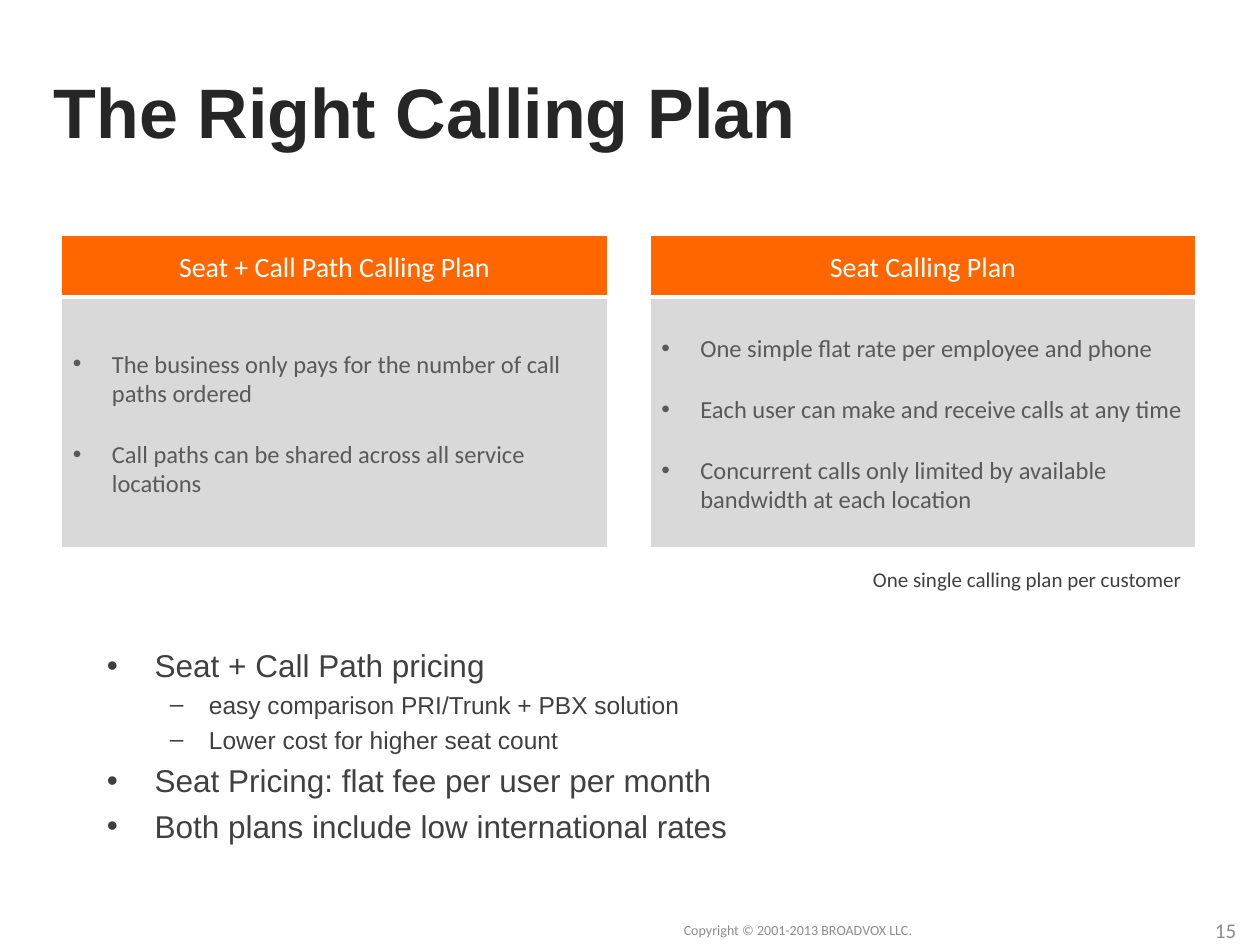
"""Build the calling plan comparison slide."""
from lxml.etree import SubElement
from pptx import Presentation
from pptx.dml.color import RGBColor as RGB
from pptx.enum.shapes import MSO_SHAPE as SHAPE
from pptx.enum.text import MSO_ANCHOR as ANCHOR, PP_ALIGN as ALIGN
from pptx.oxml.ns import qn
from pptx.util import Inches, Pt

TITLE = "The Right Calling Plan"
PLANS = [
    ("Seat + Call Path Calling Plan", [
        "The business only pays for the number of call paths ordered",
        "Call paths can be shared across all service locations"]),
    ("Seat Calling Plan", [
        "One simple flat rate per employee and phone",
        "Each user can make and receive calls at any time",
        "Concurrent calls only limited by available bandwidth at each location"]),
]
CAPTION = "One single calling plan per customer"
POINTS = [
    (0, "Seat + Call Path pricing"),
    (1, "easy comparison PRI/Trunk + PBX solution"),
    (1, "Lower cost for higher seat count"),
    (0, "Seat Pricing: flat fee per user per month"),
    (0, "Both plans include low international rates"),
]
COPYRIGHT = "Copyright © 2001-2013 BROADVOX LLC."
NUMBER = "15"

THEME = {
    "title": dict(name="Arial", size=40, color="262626", bold=True),
    "point": dict(name="Arial", size=18, color="404040"),
    "subpoint": dict(name="Arial", size=14, color="404040"),
    "header": dict(name="Calibri", size=16, color="FFFFFF"),
    "card": dict(name="Calibri", size=14, color="595959"),
    "caption": dict(name="Calibri", size=12, color="404040"),
    "number": dict(name="Calibri", size=12, color="8C8C8C"),
    "copyright": dict(name="Calibri", size=8, color="8C8C8C"),
    "header_fill": "FF6600", "card_fill": "D9D9D9", "border": "FFFFFF",
}
LEVELS = [("point", "•", 0.38, 0.38, 4.2), ("subpoint", "–", 0.81, 0.31, 3.2)]
WIDTH, HEIGHT = 10, 7.5
GRID = dict(left=0.48, top=1.86, col=4.35, gap=0.32, header=0.5, card=2)


def write(p, text, style):
    r = p.add_run()
    r.text = text
    for key, value in THEME[style].items():
        if key == "color":
            r.font.color.rgb = RGB.from_string(value)
        else:
            setattr(r.font, key, Pt(value) if key == "size" else value)


def bullet(p, char, margin, hang):
    pPr = p._p.get_or_add_pPr()
    pPr.set("marL", str(Inches(margin)))
    pPr.set("indent", str(-Inches(hang)))
    SubElement(pPr, qn("a:buFont"), typeface="Arial")
    SubElement(pPr, qn("a:buChar"), char=char)


def add_list(tf, items):
    for i, (level, text, style, char, margin, hang, before) in enumerate(items):
        p = tf.add_paragraph() if i else tf.paragraphs[0]
        bullet(p, char, margin, hang)
        p.level, p.alignment = level, ALIGN.LEFT
        if i:
            p.space_before = Pt(before)
        write(p, text, style)


def add_text(s, box, text=None, style=None, align=ALIGN.LEFT, anchor=ANCHOR.MIDDLE, wrap=True):
    tf = s.shapes.add_textbox(*map(Inches, box)).text_frame
    tf.word_wrap, tf.vertical_anchor = wrap, anchor
    if text:
        tf.paragraphs[0].alignment = align
        write(tf.paragraphs[0], text, style)
    return tf


def add_block(s, box, fill):
    sp = s.shapes.add_shape(SHAPE.RECTANGLE, *map(Inches, box))
    sp.shadow.inherit = False
    sp.fill.solid()
    sp.fill.fore_color.rgb = RGB.from_string(THEME[fill])
    sp.line.color.rgb = RGB.from_string(THEME["border"])
    sp.line.width = Pt(2)
    tf = sp.text_frame
    tf.word_wrap, tf.vertical_anchor = True, ANCHOR.MIDDLE
    return tf


def add_plan(s, column, name, items):
    g = GRID
    x = g["left"] + column * (g["col"] + g["gap"])
    tf = add_block(s, (x, g["top"] + g["header"], g["col"], g["card"]), "card_fill")
    add_list(tf, [(0, item, "card", "•", 0.31, 0.31, 18) for item in items])
    p = add_block(s, (x, g["top"], g["col"], g["header"]), "header_fill").paragraphs[0]
    p.alignment = ALIGN.CENTER
    write(p, name, "header")


def main():
    prs = Presentation()
    prs.slide_width, prs.slide_height = Inches(WIDTH), Inches(HEIGHT)
    s = prs.slides.add_slide(prs.slide_layouts[6])
    add_text(s, (0.33, 0.42, WIDTH - 0.67, 0.92), TITLE, "title")
    tf = add_text(s, (0.75, 5.08, 0.9 * WIDTH, 1.75), anchor=ANCHOR.TOP)
    add_list(tf, [(level, text, *LEVELS[level]) for level, text in POINTS])
    footer = HEIGHT - 0.32
    add_text(s, (7.58, footer, 2.33, 0.4), NUMBER, "number", ALIGN.RIGHT)
    add_text(s, (4.75, footer, 3.17, 0.4), COPYRIGHT, "copyright", ALIGN.CENTER)
    for column, (name, items) in enumerate(PLANS):
        add_plan(s, column, name, items)
    add_text(s, (6.83, 4.45, 2.68, 0.3), CAPTION, "caption", anchor=ANCHOR.TOP, wrap=False)
    prs.save("out.pptx")


if __name__ == "__main__":
    main()
